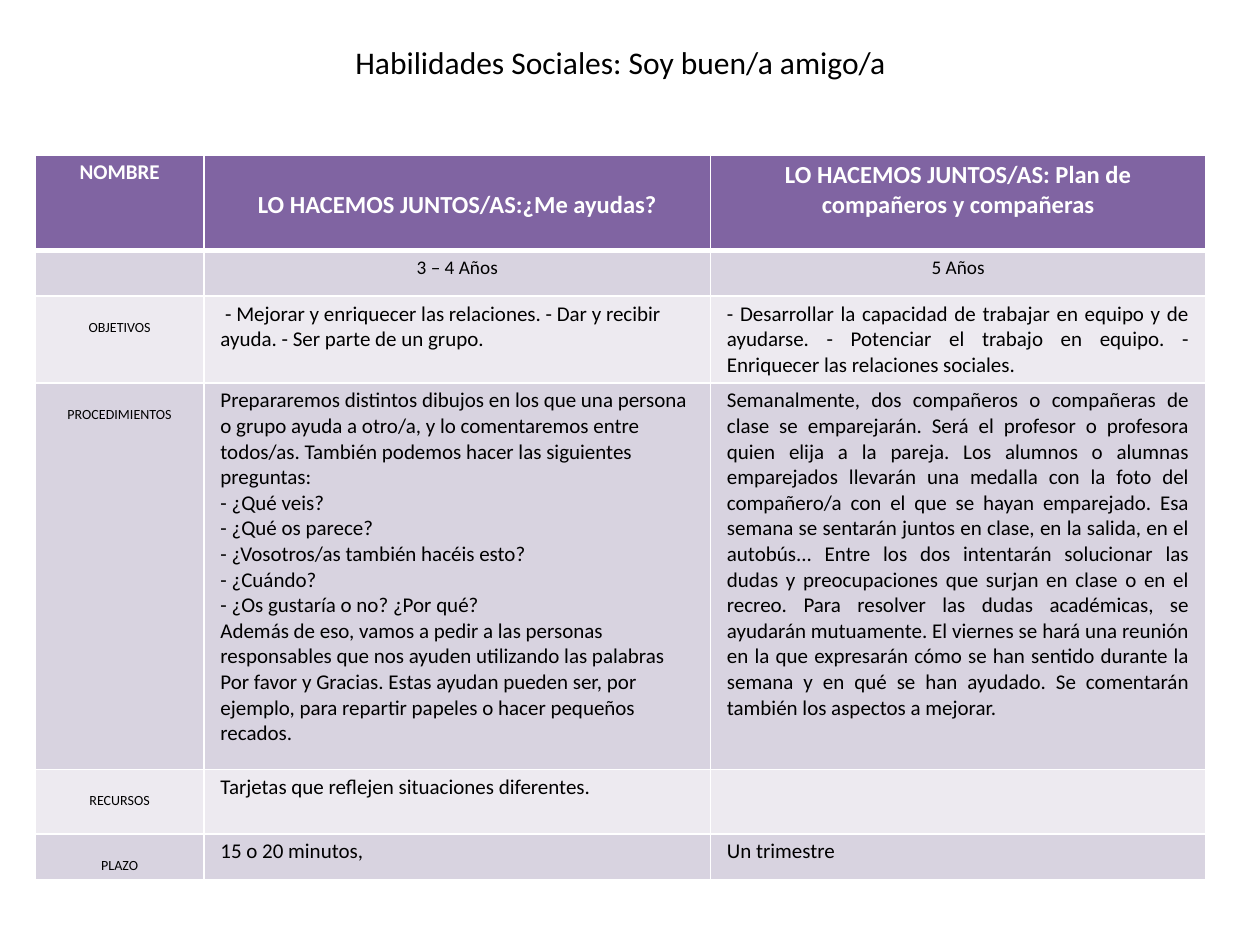
from lxml import etree
from pptx import Presentation
from pptx.dml.color import RGBColor
from pptx.enum import text
from pptx.oxml.ns import qn
from pptx.util import Inches, Pt

PURPLE, LILAC, PALE, WHITE, BLACK = "8064A2", "D8D3E0", "EDEAF0", "FFFFFF", "000000"
LEFT, CENTER, JUSTIFY = (text.PP_ALIGN.LEFT, text.PP_ALIGN.CENTER,
                         text.PP_ALIGN.JUSTIFY)
COLUMNS = [1.34, 4.02, 3.93]
ROWS = [0.76, 0.36, 0.68, 3.07, 0.51, 0.36]

HEADER = {"size": 14, "bold": True, "color": WHITE, "align": CENTER}
AGE = {"size": 11, "align": CENTER}
LABEL = {"size": 8, "align": CENTER, "top": 0.18}
LEFT_BODY = {"size": 12}
JUSTIFIED = {"size": 12, "align": JUSTIFY}

CONTENT = [
    [(["NOMBRE"], {**HEADER, "size": 12}),
     (["LO HACEMOS JUNTOS/AS:¿Me ayudas?"], {**HEADER, "top": 0.28}),
     (["LO HACEMOS JUNTOS/AS: Plan de compañeros y compañeras"], HEADER)],
    [([], {}), (["3 – 4 Años"], AGE), (["5 Años"], AGE)],
    [(["OBJETIVOS"], LABEL),
     ([" - Mejorar y enriquecer las relaciones. - Dar y recibir ayuda. "
       "- Ser parte de un grupo."], LEFT_BODY),
     (["- Desarrollar la capacidad de trabajar en equipo y de ayudarse. "
       "- Potenciar el trabajo en equipo. "
       "- Enriquecer las relaciones sociales."], JUSTIFIED)],
    [(["PROCEDIMIENTOS"], LABEL),
     (["Prepararemos distintos dibujos en los que una persona o grupo ayuda a "
       "otro/a, y lo comentaremos entre todos/as. También podemos hacer las "
       "siguientes preguntas:",
       "- ¿Qué veis?",
       "- ¿Qué os parece?",
       "- ¿Vosotros/as también hacéis esto?",
       "- ¿Cuándo?",
       "- ¿Os gustaría o no? ¿Por qué?",
       "Además de eso, vamos a pedir a las personas responsables que nos ayuden "
       "utilizando las palabras Por favor y Gracias. Estas ayudan pueden ser, "
       "por ejemplo, para repartir papeles o hacer pequeños recados."], LEFT_BODY),
     (["Semanalmente, dos compañeros o compañeras de clase se emparejarán. Será "
       "el profesor o profesora quien elija a la pareja. Los alumnos o alumnas "
       "emparejados llevarán una medalla con la foto del compañero/a con el que "
       "se hayan emparejado. Esa semana se sentarán juntos en clase, en la "
       "salida, en el autobús... Entre los dos intentarán solucionar las dudas "
       "y preocupaciones que surjan en clase o en el recreo. Para resolver las "
       "dudas académicas, se ayudarán mutuamente. El viernes se hará una reunión "
       "en la que expresarán cómo se han sentido durante la semana y en qué se "
       "han ayudado. Se comentarán también los aspectos a mejorar."], JUSTIFIED)],
    [(["RECURSOS"], LABEL),
     (["Tarjetas que reflejen situaciones diferentes."], LEFT_BODY), ([], {})],
    [(["PLAZO"], LABEL), (["15 o 20 minutos,"], LEFT_BODY),
     (["Un trimestre"], LEFT_BODY)],
]


def rgb(color):
    return RGBColor.from_string(color)


def write(tf, lines, size, bold=False, color=BLACK, align=LEFT):
    for i, line in enumerate(lines):
        p = tf.paragraphs[0] if i == 0 else tf.add_paragraph()
        p.alignment = align
        r = p.add_run()
        r.text = line
        font = {"name": "Calibri", "size": Pt(size), "bold": bold}
        for name, value in font.items():
            setattr(r.font, name, value)
        r.font.color.rgb = rgb(color)


def set_borders(cell, widths):
    """Draw white borders; widths maps a side (L, R, T, B) to points."""
    tcPr = cell._tc.get_or_add_tcPr()
    for i, (side, width) in enumerate(widths.items()):
        ln = etree.Element(qn(f"a:ln{side}"), w=str(Pt(width)))
        fill = etree.SubElement(ln, qn("a:solidFill"))
        etree.SubElement(fill, qn("a:srgbClr"), val=WHITE)
        tcPr.insert(i, ln)


def fill_cell(cell, lines, style, color, borders):
    style = dict(style)
    margins = {"margin_left": 0.13, "margin_right": 0.13,
               "margin_top": style.pop("top", 0.04) if lines else 0,
               "margin_bottom": 0.04 if lines else 0}
    for name, value in margins.items():
        setattr(cell, name, Inches(value))
    cell.fill.solid()
    cell.fill.fore_color.rgb = rgb(color)
    set_borders(cell, borders)
    if lines:
        write(cell.text_frame, lines, **style)


def add_title(s, title):
    sp = s.shapes.title
    box = {"left": 2.72, "top": 0.29, "width": 4.8, "height": 0.4}
    for name, value in box.items():
        setattr(sp, name, Inches(value))
    sp.text_frame.vertical_anchor = text.MSO_ANCHOR.TOP
    write(sp.text_frame, [title], 18)


def add_activity_table(s):
    table = s.shapes.add_table(len(ROWS), len(COLUMNS), Inches(0.28), Inches(1.23),
                               Inches(sum(COLUMNS)), Inches(sum(ROWS))).table
    for column, width in zip(table.columns, COLUMNS):
        column.width = Inches(width)
    for i, (row, height) in enumerate(zip(table.rows, ROWS)):
        row.height = Inches(height)
        color = PURPLE if i == 0 else (PALE, LILAC)[i % 2]
        borders = {"L": 1, "R": 1, "T": 3 if i == 1 else 1, "B": 3 if i == 0 else 1}
        for cell, (lines, style) in zip(row.cells, CONTENT[i]):
            fill_cell(cell, lines, style, color, borders)


def main():
    prs = Presentation()
    prs.slide_width, prs.slide_height = Inches(10), Inches(7.5)
    s = prs.slides.add_slide(prs.slide_layouts[5])
    add_title(s, "Habilidades Sociales: Soy buen/a amigo/a")
    add_activity_table(s)
    prs.save("out.pptx")


if __name__ == "__main__":
    main()
